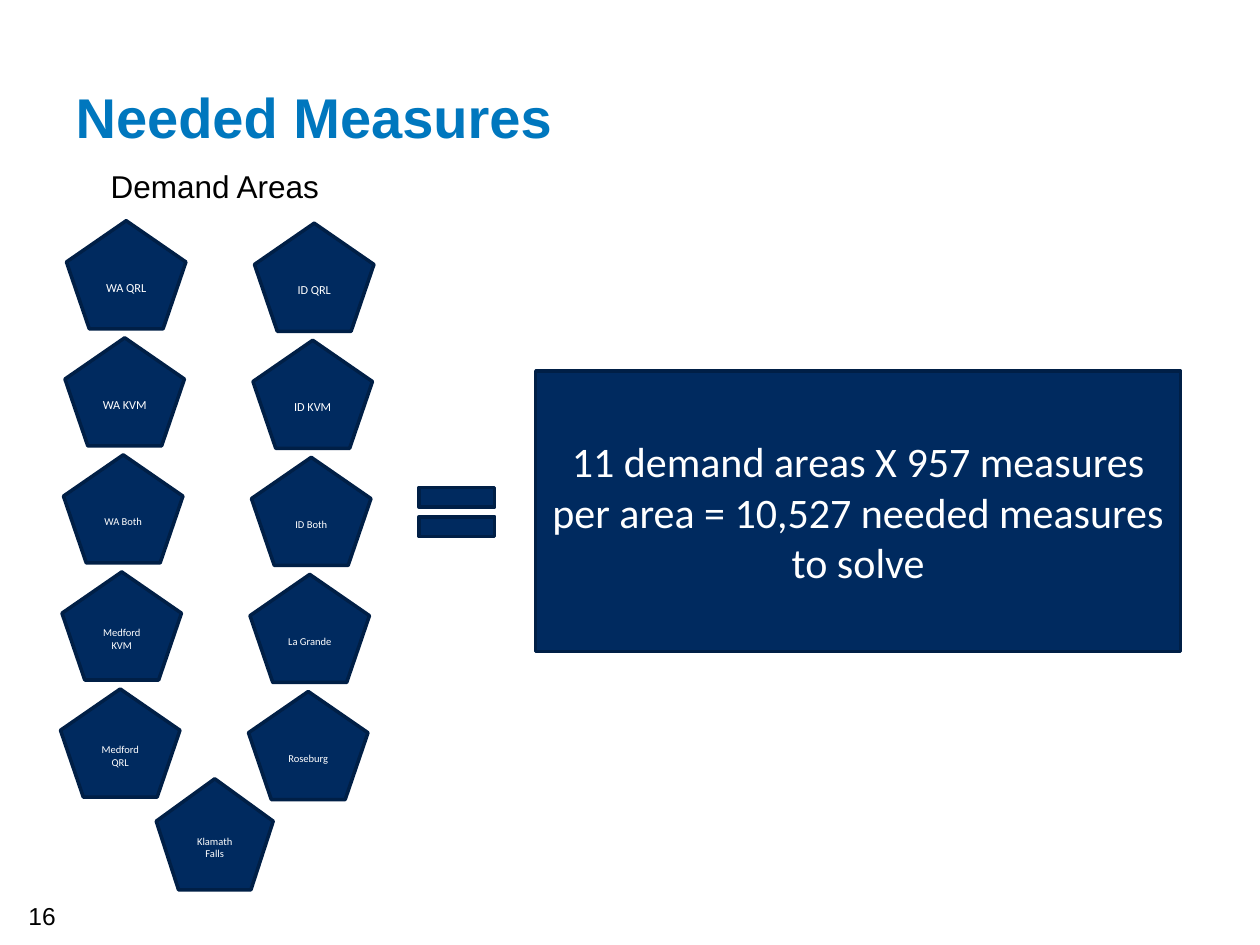
from dataclasses import dataclass

from pptx import Presentation
from pptx.dml.color import RGBColor
from pptx.enum.shapes import MSO_SHAPE
from pptx.enum.text import MSO_ANCHOR, PP_ALIGN
from pptx.util import Cm, Pt

NAVY, DARK_NAVY, BLUE = "002A5F", "001F46", "0077BE"
WHITE, BLACK = "FFFFFF", "000000"


@dataclass
class Place:
    left: float
    top: float
    width: float
    height: float

    def lengths(self) -> list:
        return [Cm(n) for n in (self.left, self.top, self.width, self.height)]


@dataclass
class DemandArea:
    name: str
    size: int = 6


@dataclass
class Column:
    left: float
    top: float
    areas: list[DemandArea]


def color(value: str) -> RGBColor:
    return RGBColor.from_string(value)


def write(box, text: str, size: int, name: str, ink: str, bold: bool = False,
          align=PP_ALIGN.CENTER, anchor=MSO_ANCHOR.MIDDLE) -> None:
    frame = box.text_frame
    frame.word_wrap = True
    frame.vertical_anchor = anchor
    para = frame.paragraphs[0]
    para.alignment = align
    span = para.add_run()
    span.text = text
    formats = {"size": Pt(size), "name": name, "bold": bold}
    for key, value in formats.items():
        setattr(span.font, key, value)
    span.font.color.rgb = color(ink)


def add_navy_shape(page, kind: MSO_SHAPE, place: Place):
    shape = page.shapes.add_shape(kind, *place.lengths())
    shape.shadow.inherit = False
    shape.fill.solid()
    shape.fill.fore_color.rgb = color(NAVY)
    shape.line.color.rgb = color(DARK_NAVY)
    shape.line.width = Pt(2)
    return shape


def add_area(page, area: DemandArea, place: Place) -> None:
    shape = add_navy_shape(page, MSO_SHAPE.REGULAR_PENTAGON, place)
    write(shape, area.name, area.size, "Calibri", WHITE)


def add_label(page, text: str, size: int, place: Place, align) -> None:
    box = page.shapes.add_textbox(*place.lengths())
    write(box, text, size, "Arial", BLACK, align=align, anchor=MSO_ANCHOR.TOP)


def main() -> None:
    deck = Presentation()
    deck.slide_width, deck.slide_height = Cm(25.4), Cm(19.05)
    page = deck.slides.add_slide(deck.slide_layouts[5])

    # Title and heading
    title = page.shapes.title
    title.left, title.top, title.width, title.height = Place(1.27, 0.76, 22.86, 3.18).lengths()
    write(title, "Needed Measures", 32, "Arial", BLUE, bold=True, align=PP_ALIGN.LEFT)
    add_label(page, "Demand Areas", 18, Place(1.98, 3.24, 6.22, 1.4), PP_ALIGN.LEFT)

    # Two columns of demand areas, each row a little further left
    columns = [
        Column(1.34, 4.45, [DemandArea("WA QRL", 7), DemandArea("WA KVM", 7),
                            DemandArea("WA Both"), DemandArea("Medford KVM"),
                            DemandArea("Medford QRL")]),
        Column(5.13, 4.5, [DemandArea("ID QRL", 7), DemandArea("ID KVM", 7),
                           DemandArea("ID Both"), DemandArea("La Grande"),
                           DemandArea("Roseburg")]),
    ]
    row_pitch, row_shift = 2.36, 0.03
    for column in columns:
        for row, area in enumerate(column.areas):
            add_area(page, area, Place(column.left - row * row_shift,
                                       column.top + row * row_pitch, 2.41, 2.18))
    add_area(page, DemandArea("Klamath Falls"), Place(3.15, 15.7, 2.36, 2.24))

    # Equals sign and result
    add_navy_shape(page, MSO_SHAPE.MATH_EQUAL, Place(8.17, 9.48, 2.08, 1.68))
    result = add_navy_shape(page, MSO_SHAPE.RECTANGLE, Place(10.8, 7.48, 13, 5.66))
    write(result, "11 demand areas X 957 measures per area = 10,527 needed measures to solve",
          24, "Calibri", WHITE)

    # Page number
    add_label(page, "16", 14, Place(0, 18.03, 1.7, 1.02), PP_ALIGN.CENTER)

    deck.save("out.pptx")


if __name__ == "__main__":
    main()
